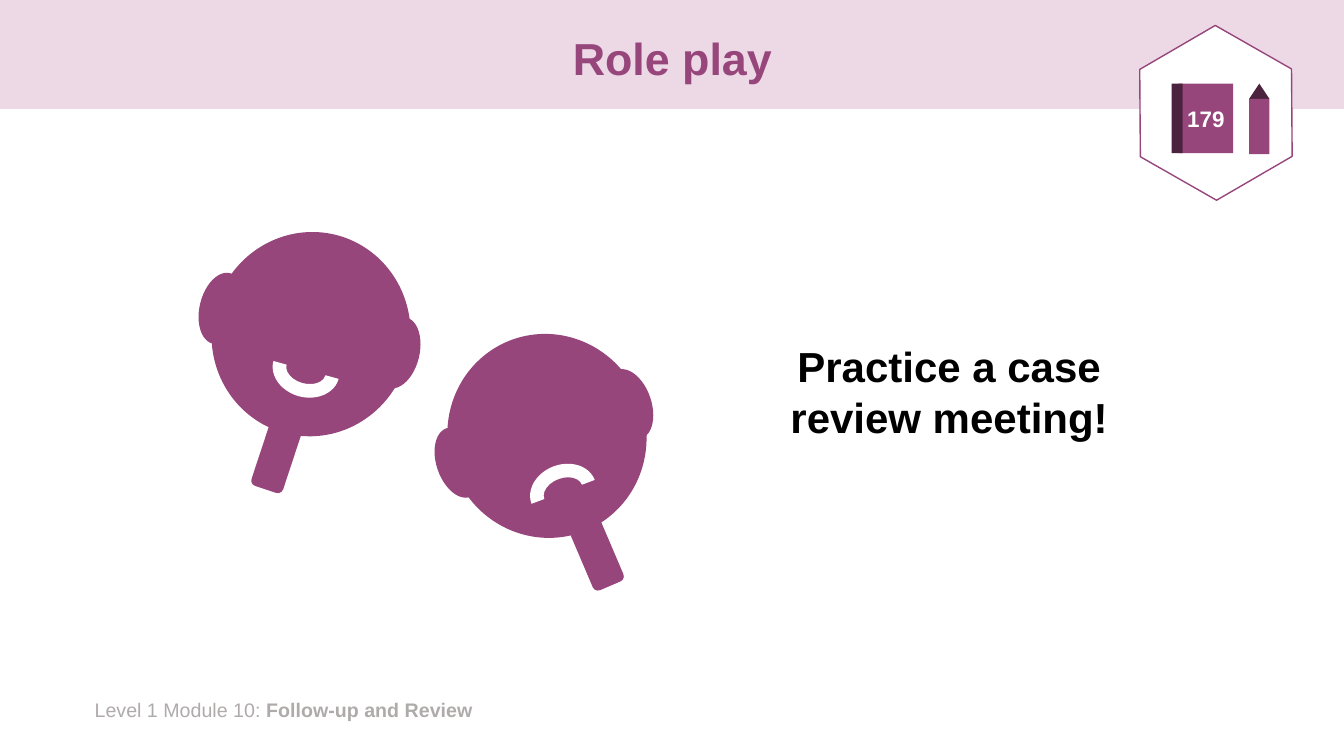
from pptx import Presentation
from pptx.dml.color import RGBColor
from pptx.enum.shapes import MSO_SHAPE as Shape
from pptx.enum.text import MSO_ANCHOR as Anchor, PP_ALIGN as Align
from pptx.util import Pt

EMU_PER_PX = 9144
PLUM, DARK_PLUM, PALE_PLUM = "97467C", "4C233E", "EDD8E6"
WHITE, BLACK, GREY = "FFFFFF", "000000", "AFABAB"


def px(length):
    return length * EMU_PER_PX


def rgb(code):
    return RGBColor.from_string(code)


class SlideBuilder:
    font = "Arial"

    def __init__(self, slide):
        self.slide = slide

    def shape(self, kind, left, top, width, height, fill, tilt=0, line=None):
        item = self.slide.shapes.add_shape(kind, px(left), px(top), px(width), px(height))
        item.shadow.inherit = False
        item.rotation = tilt
        item.fill.solid()
        item.fill.fore_color.rgb = rgb(fill)
        if line:
            item.line.color.rgb = rgb(line)
            item.line.width = Pt(1)
        else:
            item.line.fill.background()
        return item

    def style_run(self, run, size, color, bold=True):
        run.font.name = self.font
        run.font.size = Pt(size)
        run.font.bold = bold
        run.font.color.rgb = rgb(color)

    def label(self, item, text, size, color, wrap=True):
        frame = item.text_frame
        frame.text = text
        frame.word_wrap = wrap
        paragraph = frame.paragraphs[0]
        paragraph.alignment = Align.CENTER
        self.style_run(paragraph.runs[0], size, color)
        return frame

    def box(self, left, top, width, height):
        return self.slide.shapes.add_textbox(px(left), px(top), px(width), px(height))

    def title(self, text, left, top, width, height):
        heading = self.slide.shapes.title
        heading.left, heading.top = px(left), px(top)
        heading.width, heading.height = px(width), px(height)
        frame = self.label(heading, text, 32, PLUM)
        frame.vertical_anchor = Anchor.MIDDLE
        frame.paragraphs[0].line_spacing = 0.9
        self.slide.shapes.element.append(heading.element)

    def footer(self, course, topic, left, top, width, height):
        frame = self.box(left, top, width, height).text_frame
        frame.word_wrap = True
        frame.text = course
        paragraph = frame.paragraphs[0]
        paragraph.add_run().text = topic
        for run, bold in zip(paragraph.runs, (False, True)):
            self.style_run(run, 14, GREY, bold)

    def mask(self, tilt, handle, handle_tilt, head, ears, mouth, mouth_tilt):
        self.shape(Shape.ROUNDED_RECTANGLE, *handle, 33, 96, PLUM, handle_tilt)
        self.shape(Shape.OVAL, *head, 197, 203, PLUM, tilt)
        for ear in ears:
            self.shape(Shape.OVAL, *ear, 43, 72, PLUM, tilt)
        self.shape(Shape.BLOCK_ARC, *mouth, 67, 54, WHITE, mouth_tilt)

    def page_badge(self, page):
        hexagon = self.shape(Shape.HEXAGON, 1119, 37, 174, 150, WHITE, 29.7, PLUM)
        hexagon.adjustments[0] = 0.29
        book = self.shape(Shape.RECTANGLE, 1169, 83, 54, 69, PLUM)
        self.label(book, page, 16, WHITE, wrap=False).vertical_anchor = Anchor.MIDDLE
        self.shape(Shape.RECTANGLE, 1162, 83, 11, 69, DARK_PLUM)
        self.shape(Shape.ISOSCELES_TRIANGLE, 1239, 83, 20, 15, DARK_PLUM)
        self.shape(Shape.RECTANGLE, 1239, 98, 20, 55, PLUM)


def main():
    deck = Presentation()
    deck.slide_width, deck.slide_height = px(1333), px(750)
    page = SlideBuilder(deck.slides.add_slide(deck.slide_layouts[5]))

    page.shape(Shape.RECTANGLE, 0, 0, 1333, 108, PALE_PLUM)
    page.footer("Level 1 Module 10: ", "Follow-up and Review", 84, 687, 455, 34)
    page.title("Role play", 92, 13, 1150, 95)

    page.mask(tilt=13.8, handle=(262, 392), handle_tilt=18.3, head=(210, 230),
              ears=[(198, 270), (373, 314)], mouth=(270, 340), mouth_tilt=195.3)
    page.mask(tilt=341, handle=(570, 489), handle_tilt=336.9, head=(444, 331),
              ears=[(433, 423), (603, 365)], mouth=(525, 461), mouth_tilt=339.3)

    page.label(page.box(763, 333, 357, 111), "Practice a case review meeting!", 30, BLACK)
    page.page_badge("179")
    deck.save("out.pptx")


if __name__ == "__main__":
    main()
